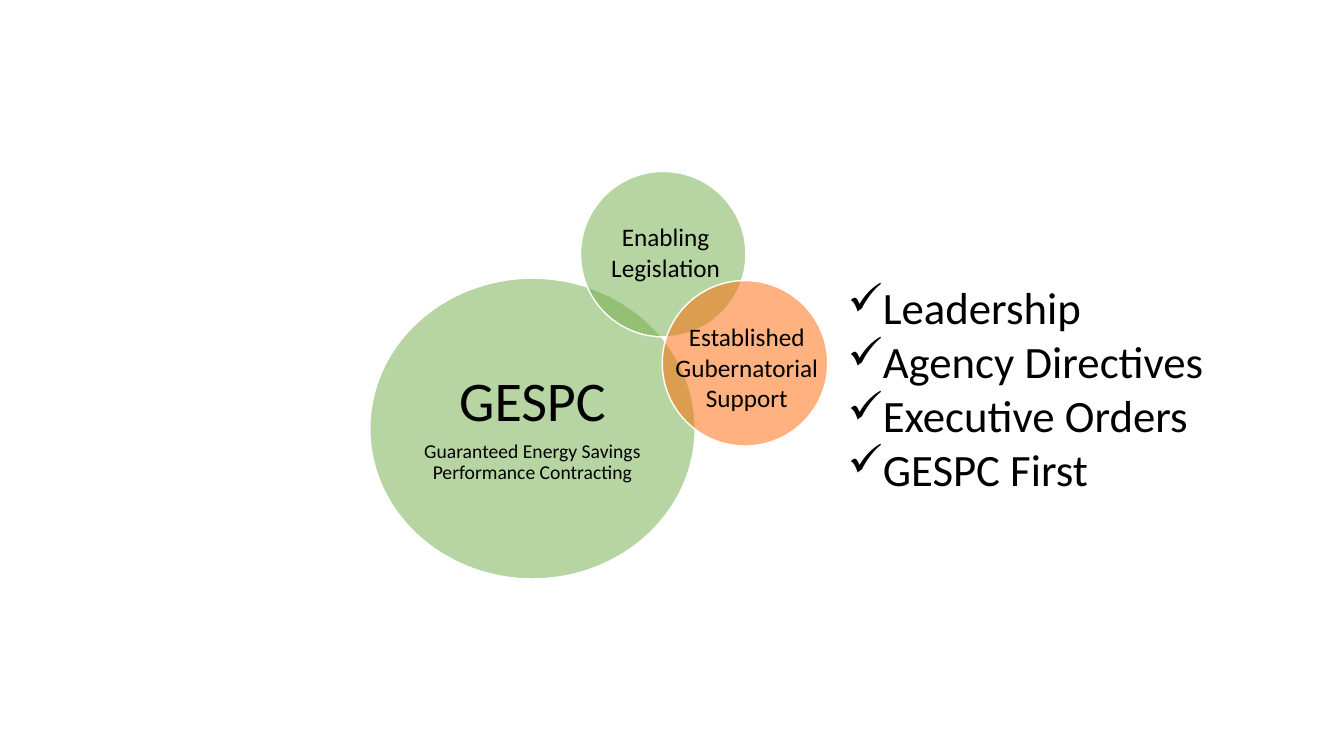
from dataclasses import dataclass

from lxml.etree import SubElement
from pptx import Presentation
from pptx.dml.color import RGBColor
from pptx.enum.shapes import MSO_SHAPE
from pptx.enum.text import MSO_ANCHOR, MSO_AUTO_SIZE, PP_ALIGN
from pptx.oxml.ns import qn
from pptx.util import Cm, Pt


@dataclass(frozen=True)
class Theme:
    font: str = "Calibri"
    ink: str = "000000"
    edge: str = "FFFFFF"
    green: str = "70AD47"
    orange: str = "FF6600"
    alpha: int = 50
    head: int = 40
    list: int = 32
    label: int = 18
    note: int = 14


class Board:
    def __init__(self, slide, theme):
        self.slide = slide
        self.theme = theme

    def style(self, para, size):
        for run in para.runs:
            run.font.name = self.theme.font
            run.font.size = Pt(size)
            run.font.color.rgb = RGBColor.from_string(self.theme.ink)

    def circle(self, left, top, width, height, color):
        oval = self.slide.shapes.add_shape(
            MSO_SHAPE.OVAL, Cm(left), Cm(top), Cm(width), Cm(height))
        oval.shadow.inherit = False
        oval.fill.solid()
        oval.fill.fore_color.rgb = RGBColor.from_string(color)
        tint = oval.fill._xPr.find(qn("a:solidFill"))[0]
        SubElement(tint, qn("a:alpha"), val=str(self.theme.alpha * 1000))
        oval.line.color.rgb = RGBColor.from_string(self.theme.edge)
        oval.line.width = Pt(1)
        return oval

    def caption(self, oval, lines):
        frame = oval.text_frame
        frame.word_wrap = True
        frame.vertical_anchor = MSO_ANCHOR.MIDDLE
        frame.margin_left = frame.margin_right = Cm(0.15)
        frame.margin_top = frame.margin_bottom = Cm(0.15)
        frame.text = "\n".join(text for text, size in lines)
        for para, (text, size) in zip(frame.paragraphs, lines):
            para.alignment = PP_ALIGN.CENTER
            para.line_spacing = 0.9
            para.space_after = Pt(6)
            self.style(para, size)

    def text(self, left, top, width, height, text, size):
        box = self.slide.shapes.add_textbox(
            Cm(left), Cm(top), Cm(width), Cm(height))
        frame = box.text_frame
        frame.word_wrap = True
        frame.auto_size = MSO_AUTO_SIZE.SHAPE_TO_FIT_TEXT
        frame.text = text
        for para in frame.paragraphs:
            self.style(para, size)
        return frame

    def label(self, left, top, width, height, text):
        frame = self.text(left, top, width, height, text, self.theme.label)
        frame.paragraphs[0].alignment = PP_ALIGN.CENTER

    def checks(self, left, top, width, height, items):
        frame = self.text(
            left, top, width, height, "\n".join(items), self.theme.list)
        indent = Cm(0.79)
        for para in frame.paragraphs:
            props = para._p.get_or_add_pPr()
            props.set("marL", str(indent))
            props.set("indent", str(-indent))
            SubElement(props, qn("a:buChar"), char="✓")


def main():
    deck = Presentation()
    deck.slide_width = Cm(33.87)
    deck.slide_height = Cm(19.05)
    theme = Theme()
    board = Board(deck.slides.add_slide(deck.slide_layouts[6]), theme)

    board.checks(21.11, 6.93, 9.58, 6.5, [
        "Leadership", "Agency Directives", "Executive Orders", "GESPC First"])
    core = board.circle(9.32, 7.01, 8.2, 7.58, theme.green)
    board.caption(core, [
        ("GESPC", theme.head),
        ("Guaranteed Energy Savings Performance Contracting", theme.note)])
    small = 4.17
    board.circle(14.63, 4.32, small, small, theme.green)
    board.circle(16.69, 7.07, small, small, theme.orange)
    board.label(16.61, 7.98, 4.42, 2.57, "Established Gubernatorial Support")
    board.label(15.06, 5.46, 3.43, 1.8, "Enabling Legislation")
    deck.save("out.pptx")


if __name__ == "__main__":
    main()
